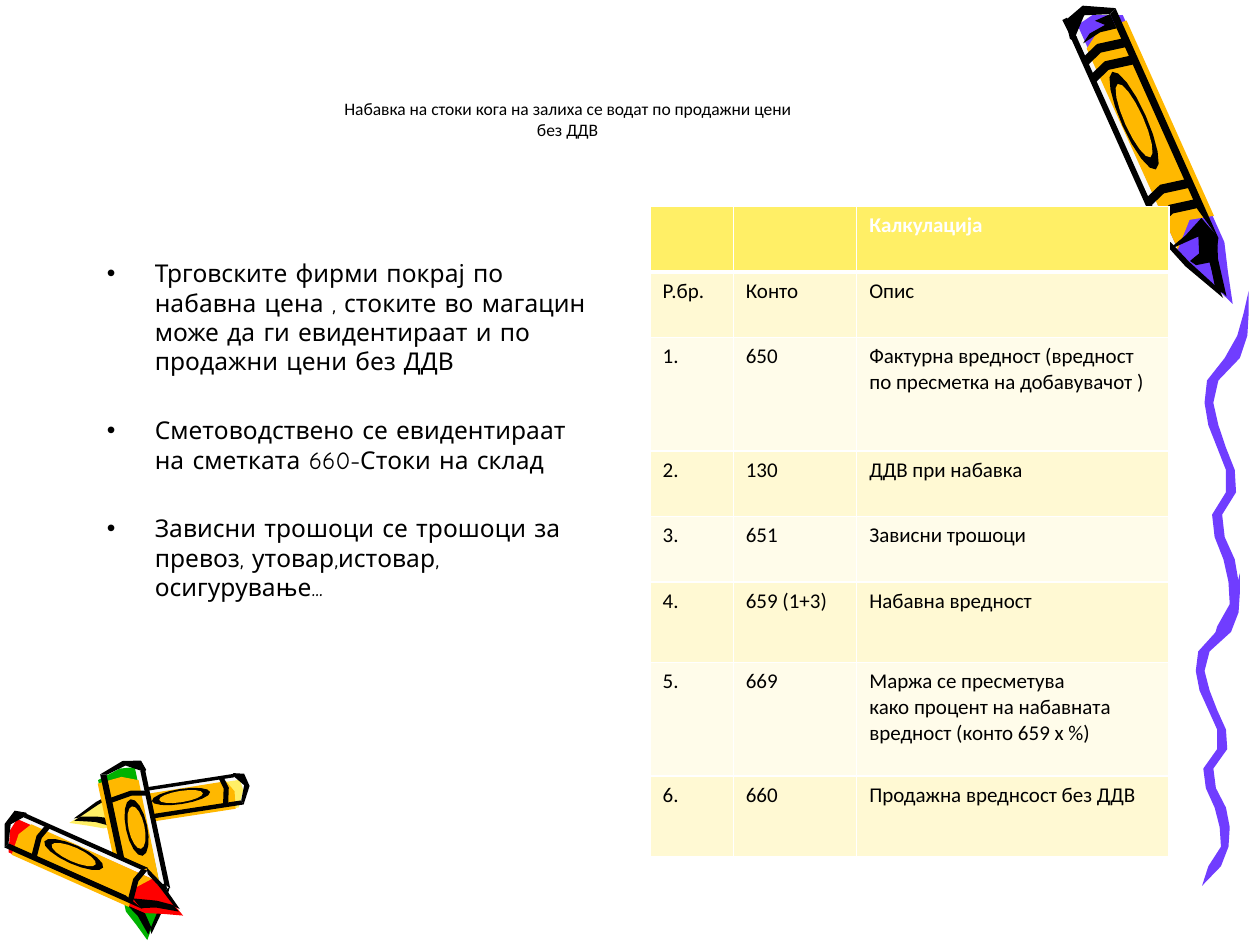
from dataclasses import dataclass
from math import cos, hypot, pi, sin
from lxml.etree import SubElement
from pptx import Presentation
from pptx.dml.color import RGBColor
from pptx.enum.shapes import MSO_CONNECTOR as Connector
from pptx.enum.text import MSO_ANCHOR as Anchor, MSO_AUTO_SIZE as AutoSize, PP_ALIGN as Align
from pptx.oxml.ns import qn
from pptx.util import Inches, Pt


@dataclass(frozen=True)
class Theme:
    black: str = "000000"
    white: str = "FFFFFF"
    paper: str = "F8F8F8"
    violet: str = "703DFF"
    orange: str = "FFB800"
    yellow: str = "FFEF66"
    red: str = "FF0000"
    green: str = "00B200"
    band_dark: str = "FFF9D3"
    band_light: str = "FFFCEA"
    title_size: int = 10
    body_size: int = 14
    table_size: int = 12
    table_font: str = "Calibri"
    body_font: str = "Comic Neue"


@dataclass(frozen=True)
class Crayon:
    start: tuple        # middle of the blunt end, in inches
    end: tuple          # point of the nib, in inches
    half_width: float   # negative puts the highlight on the other side
    accent: str         # colour of cap and nib
    bands: tuple        # places of the ink rings, 0 at the cap and 1 at the nib
    shaded: bool = False


theme = Theme()


def add_span(para, text, size, font, color, bold=False):
    span = para.add_run()
    span.text = text
    span.font.size, span.font.name, span.font.bold = Pt(size), font, bold
    span.font.color.rgb = RGBColor.from_string(color)


def add_outline(page, color, points, start, along, across):
    """Draw (u, v) points as start + u * along + v * across."""
    corners = [(Inches(start[0] + u * along[0] + v * across[0]),
                Inches(start[1] + u * along[1] + v * across[1])) for u, v in points]
    builder = page.shapes.build_freeform(*corners[0])
    builder.add_line_segments(corners[1:], close=True)
    shape = builder.convert_to_shape()
    shape.shadow.inherit = False
    shape.fill.solid()
    shape.fill.fore_color.rgb = RGBColor.from_string(color)
    shape.line.fill.background()


deck = Presentation()
deck.slide_width, deck.slide_height = Inches(10), Inches(7.5)
page = deck.slides.add_slide(deck.slide_layouts[5])

# Crayon parts: u runs from cap (0) to nib (1), v from highlight (-1) to shade (1)
silhouette = [(0, -1), (0, 0.9), (0.78, 0.9), (1, 0.2), (0.76, -1)]
colored_shell = [(0.01, -0.7), (0, 0), (0.04, 1.1), (0.83, 1.1), (0.92, 0.75), (1.02, 0.4), (0.8, -0.7)]
wrapper = [(0.09, -0.75), (0.05, 0), (0.06, 1.15), (0.74, 1.15), (0.72, 0.2), (0.79, -0.7)]
cap_ink = [(-0.02, -1.05), (-0.04, -0.2), (0.01, 0.95), (0.02, 0.65), (-0.01, -0.3), (0.05, -1.1), (0.04, -1.2)]
highlight_edge = [(0.04, -1.15), (0.75, -1.15), (0.72, -0.92), (0.04, -0.92)]
shade_edge = [(0.01, 0.95), (0.81, 0.95), (0.7, 0.66), (0.02, 0.66)]
nib_edges = [
    [(0.74, -1.15), (0.85, -0.7), (0.99, 0.15), (0.96, 0.15), (0.84, -0.5), (0.76, -0.85)],
    [(0.8, 0.95), (0.87, 0.6), (0.99, 0.3), (0.95, 0.1), (0.86, 0.25), (0.74, 0.65)],
]
cap_shading = [(0.07, -0.8), (0.06, 0), (0.07, 0.66), (0.02, 0.66), (0.02, 0), (0.045, 0.3), (0.05, -0.4)]
nib_shading = [(0.78, -1.1), (0.76, -0.2), (0.73, 0.66), (0.81, 0.95), (0.87, 0.5), (0.98, 0.3),
               (0.96, 0), (0.87, 0.25), (0.86, -0.3), (0.84, -0.45), (0.83, 0), (0.78, 0.25)]
ovals = [[(0.36 + scale * 0.17 * cos(k * pi / 8), -0.2 + scale * 0.5 * sin(k * pi / 8))
          for k in range(16)] for scale in (1, 0.75)]

crayons = [
    Crayon((8.67, 0.12), (9.69, 2.4), 0.2, theme.violet, (0.11, 0.17, 0.6, 0.67), shaded=True),
    Crayon((1.93, 6.27), (0.57, 6.48), 0.12, theme.yellow, (0.1, 0.72)),
    Crayon((0.95, 6.1), (1.23, 7.42), -0.17, theme.green, (0.16, 0.72)),
    Crayon((0.08, 6.59), (1.45, 7.2), -0.15, theme.red, (0.16, 0.72)),
]
for crayon in crayons:
    along = (crayon.end[0] - crayon.start[0], crayon.end[1] - crayon.start[1])
    ratio = crayon.half_width / hypot(*along)
    placement = (crayon.start, along, (along[1] * ratio, -along[0] * ratio))
    rings = [[(u, -1), (u - 0.02, -0.3), (u, 0.9), (u + 0.03, 0.9), (u + 0.01, -0.3), (u + 0.03, -1)]
             for u in crayon.bands]
    shading = [cap_shading, nib_shading] if crayon.shaded else []
    ink = [cap_ink, highlight_edge, shade_edge, *nib_edges, *rings, *shading, ovals[0]]
    layers = [(theme.paper, [silhouette]), (crayon.accent, [colored_shell]), (theme.orange, [wrapper]),
              (theme.black, ink), (theme.orange, [ovals[1]])]
    for color, parts in layers:
        for part in parts:
            add_outline(page, color, part, *placement)

cap_line = page.shapes.add_connector(
    Connector.STRAIGHT, Inches(8.45), Inches(0.15), Inches(8.53), Inches(0.31))
cap_line.line.color.rgb = RGBColor.from_string(theme.black)
cap_line.line.width = Pt(3)
SubElement(cap_line._element.spPr, qn("a:effectLst"))

# Squiggle: left and right edge at equal steps down, one ribbon drawn in two sizes
ribbon = [(0.35, 0.35), (0.31, 0.35), (0.26, 0.34), (0.16, 0.28), (0.02, 0.11), (0, 0.07),
          (0.03, 0.11), (0.1, 0.17), (0.17, 0.24), (0.17, 0.25), (0.06, 0.14), (0.08, 0.16),
          (0.15, 0.24), (0.19, 0.27), (0.2, 0.26), (0.1, 0.2), (0.05, 0.05)]
steps = [(k / (len(ribbon) - 1), left, right) for k, (left, right) in enumerate(ribbon)]
stroke = [(u, left) for u, left, right in steps] + [(u, right) for u, left, right in reversed(steps)]
for start, height in (((9.49, 4.55), 2.48), ((9.56, 2.31), 2.84)):
    add_outline(page, theme.violet, stroke, start, (0, height), (1, 0))

# Title
title = page.shapes.title
title.left, title.top, title.width, title.height = Inches(0.75), Inches(0.17), Inches(7.51), Inches(1.16)
frame = title.text_frame
frame.word_wrap, frame.auto_size = True, AutoSize.NONE
frame.vertical_anchor, frame.margin_bottom = Anchor.BOTTOM, Inches(0.22)
para = frame.paragraphs[0]
para.alignment = Align.CENTER
title_style = (theme.title_size, theme.table_font, theme.black)
add_span(para, "Набавка на стоки кога на залиха се водат по продажни цени", *title_style)
para.add_line_break()
add_span(para, "без ДДВ", *title_style)

# Bulleted text
points = [
    "Трговските фирми покрај по набавна цена , стоките во магацин може да ги евидентираат и по продажни цени без ДДВ",
    "Сметоводствено се евидентираат на сметката 660-Стоки на склад",
    "Зависни трошоци се трошоци за превоз, утовар,истовар, осигурување...",
]
box = page.shapes.add_textbox(Inches(0.75), Inches(2), Inches(4.12), Inches(4))
frame = box.text_frame
frame.word_wrap = True
for index, point in enumerate(points):
    para = frame.add_paragraph() if index else frame.paragraphs[0]
    para.space_before = Pt(22.5 if index else 2.8)
    add_span(para, point, theme.body_size, theme.body_font, theme.black)
    props = para._p.get_or_add_pPr()
    props.set("marL", str(Inches(0.38)))
    props.set("indent", str(-Inches(0.38)))
    SubElement(props, qn("a:buFont"), typeface="Arial")
    SubElement(props, qn("a:buChar"), char="•")

# Calculation table: row height, then the three cells
rows = [
    (0.52, "", "", "Калкулација"),
    (0.52, "Р.бр.", "Конто", "Опис"),
    (0.9, "1.", "650", "Фактурна вредност (вредност по пресметка на добавувачот )"),
    (0.52, "2.", "130", "ДДВ при набавка"),
    (0.52, "3.", "651", "Зависни трошоци"),
    (0.64, "4.", "659 (1+3)", "Набавна вредност"),
    (0.9, "5.", "669", "Маржа се пресметува\nкако процент на набавната вредност (конто 659 x %)"),
    (0.64, "6.", "660", "Продажна вреднсост без ДДВ"),
]
table = page.shapes.add_table(
    len(rows), 3, Inches(5.16), Inches(1.64), Inches(4.12), Inches(5.15)).table
for column, width in zip(table.columns, (0.66, 0.98, 2.48)):
    column.width = Inches(width)

for r, (height, *texts) in enumerate(rows):
    table.rows[r].height = Inches(height)
    header = r == 0
    fill = theme.yellow if header else (theme.band_light, theme.band_dark)[r % 2]
    for c, text in enumerate(texts):
        cell = table.cell(r, c)
        for index, line in enumerate(text.split("\n") if text else []):
            para = cell.text_frame.add_paragraph() if index else cell.text_frame.paragraphs[0]
            add_span(para, line, theme.table_size, theme.table_font,
                     theme.white if header else theme.black, bold=header)
        props = cell._tc.get_or_add_tcPr()
        for side in "LRTB":
            heavy = (side == "B" and header) or (side == "T" and r == 1)
            border = SubElement(props, qn(f"a:ln{side}"), w=str(Pt(3 if heavy else 1)))
            SubElement(SubElement(border, qn("a:solidFill")), qn("a:srgbClr"), val=theme.white)
        cell.fill.solid()
        cell.fill.fore_color.rgb = RGBColor.from_string(fill)

deck.save("out.pptx")
